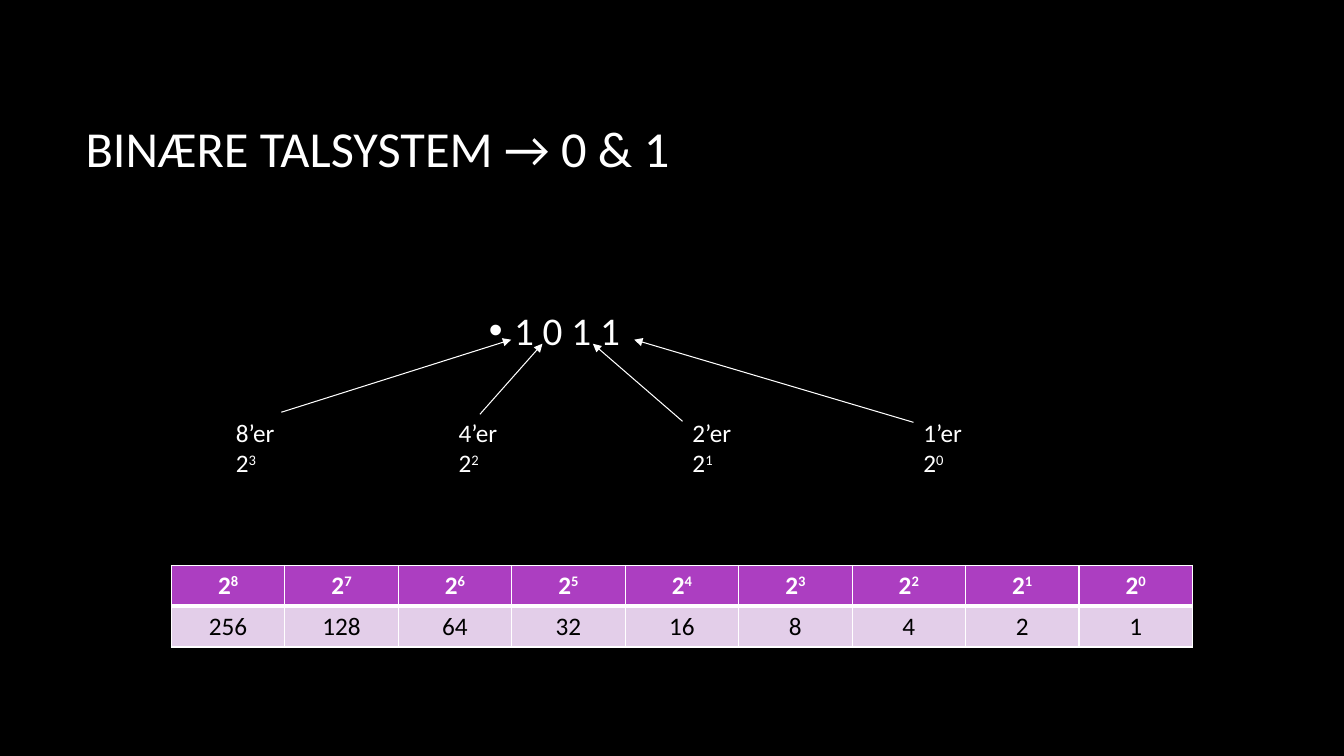
"""Build a slide that explains place values in the binary number system."""
from dataclasses import dataclass

from lxml import etree
from pptx import Presentation
from pptx import util as u
from pptx.dml.color import RGBColor
from pptx.enum import shapes, text
from pptx.oxml.ns import qn

TITLE = "BINÆRE TALSYSTEM → 0 & 1"
DIGITS = "1 0 1 1"
PLACES = [
    {"power": 3, "left": 2.24, "width": 1.39, "start": (2.79, 4.09), "tip": (5.07, 3.37)},
    {"power": 2, "left": 4.45, "width": 1.51, "start": (4.76, 4.11), "tip": (5.38, 3.41)},
    {"power": 1, "left": 6.77, "width": 1.34, "start": (6.77, 4.18), "tip": (5.88, 3.41)},
    {"power": 0, "left": 9.06, "width": 1.65, "start": (9.06, 4.19), "tip": (6.29, 3.37)},
]
POWERS = range(8, -1, -1)

SLIDE = (13.33, 7.5)
MARGIN, CONTENT_WIDTH = 0.75, 11.08
PLACE_TOP, PLACE_HEIGHT = 4.09, 0.71
GRID_LEFT, GRID_TOP, GRID_WIDTH, ROW_HEIGHT = 1.7, 5.61, 10.13, 0.405
BULLET_INDENT, BULLET_HANG = 4.25, 0.25


@dataclass(frozen=True)
class Theme:
    """Colours, font and type sizes of the slide."""
    font: str = "Calibri"
    ground: str = "000000"
    light: str = "FFFFFF"
    header: str = "AC3EC1"
    band: str = "E3CEE9"
    title: int = 36
    digits: int = 28
    body: int = 18
    rule: float = 0.75
    cell_rule: int = 1
    header_rule: int = 3


THEME = Theme()


def colour(code):
    """Turn a hex code into a colour."""
    return RGBColor.from_string(code)


def add_run(paragraph, words, size=THEME.body, ink=THEME.light, bold=False, raised=False):
    """Add a styled run, raised when it is an exponent."""
    run = paragraph.add_run()
    run.text = words
    style = {"name": THEME.font, "size": u.Pt(size), "bold": bold}
    for key, value in style.items():
        setattr(run.font, key, value)
    run.font.color.rgb = colour(ink)
    if raised:
        run.font._element.set("baseline", "30000")


def add_power(paragraph, power, bold=False):
    """Write two raised to a power."""
    add_run(paragraph, "2", bold=bold)
    add_run(paragraph, str(power), bold=bold, raised=True)


def add_frame(slide, box, anchor=text.MSO_ANCHOR.MIDDLE):
    """Add a wrapping text box and return its frame."""
    frame = slide.shapes.add_textbox(*map(u.Inches, box)).text_frame
    for key, value in {"word_wrap": True, "vertical_anchor": anchor}.items():
        setattr(frame, key, value)
    return frame


def add_digits(slide):
    """Add the bulleted binary number."""
    paragraph = add_frame(slide, (MARGIN, 2.97, CONTENT_WIDTH, 0.6)).paragraphs[0]
    props = paragraph._p.get_or_add_pPr()
    props.set("marL", str(u.Inches(BULLET_INDENT)))
    props.set("indent", str(-u.Inches(BULLET_HANG)))
    etree.SubElement(props, qn("a:buFont"), typeface="Arial")
    etree.SubElement(props, qn("a:buChar"), char="•")
    add_run(paragraph, DIGITS, THEME.digits)


def add_place(slide, place):
    """Add a place value label and its arrow to the digit."""
    box = (place["left"], PLACE_TOP, place["width"], PLACE_HEIGHT)
    frame = add_frame(slide, box, text.MSO_ANCHOR.TOP)
    add_run(frame.paragraphs[0], f"{2 ** place['power']}’er")
    add_power(frame.add_paragraph(), place["power"])
    ends = map(u.Inches, place["start"] + place["tip"])
    arrow = slide.shapes.add_connector(shapes.MSO_CONNECTOR.STRAIGHT, *ends)
    arrow.line.width = u.Pt(THEME.rule)
    arrow.line.color.rgb = colour(THEME.light)
    etree.SubElement(arrow.line._get_or_add_ln(), qn("a:tailEnd"), type="triangle")
    etree.SubElement(arrow._element.spPr, qn("a:effectLst"))


def style_cell(cell, fill, top, bottom):
    """Draw the rules of a cell and fill it."""
    props = cell._tc.get_or_add_tcPr()
    widths = {"L": THEME.cell_rule, "R": THEME.cell_rule, "T": top, "B": bottom}
    for side, width in widths.items():
        rule = etree.SubElement(props, qn(f"a:ln{side}"), w=str(u.Pt(width)))
        solid = etree.SubElement(rule, qn("a:solidFill"))
        etree.SubElement(solid, qn("a:srgbClr"), val=THEME.light)
    cell.fill.solid()
    cell.fill.fore_color.rgb = colour(fill)
    cell.text_frame.paragraphs[0].alignment = text.PP_ALIGN.CENTER


def add_powers(slide):
    """Add the table of powers and their values."""
    box = (GRID_LEFT, GRID_TOP, GRID_WIDTH, 2 * ROW_HEIGHT)
    table = slide.shapes.add_table(2, len(POWERS), *map(u.Inches, box)).table
    for column, power in enumerate(POWERS):
        head, value = table.cell(0, column), table.cell(1, column)
        style_cell(head, THEME.header, THEME.cell_rule, THEME.header_rule)
        style_cell(value, THEME.band, THEME.header_rule, THEME.cell_rule)
        add_power(head.text_frame.paragraphs[0], power, bold=True)
        add_run(value.text_frame.paragraphs[0], str(2 ** power), ink=THEME.ground)


def main():
    """Assemble and save the slide."""
    deck = Presentation()
    deck.slide_width, deck.slide_height = map(u.Inches, SLIDE)
    slide = deck.slides.add_slide(deck.slide_layouts[6])
    slide.background.fill.solid()
    slide.background.fill.fore_color.rgb = colour(THEME.ground)
    heading = add_frame(slide, (MARGIN, 0.67, CONTENT_WIDTH, 1.59))
    add_run(heading.paragraphs[0], TITLE, THEME.title)
    add_digits(slide)
    for place in PLACES:
        add_place(slide, place)
    add_powers(slide)
    deck.save("out.pptx")


if __name__ == "__main__":
    main()
